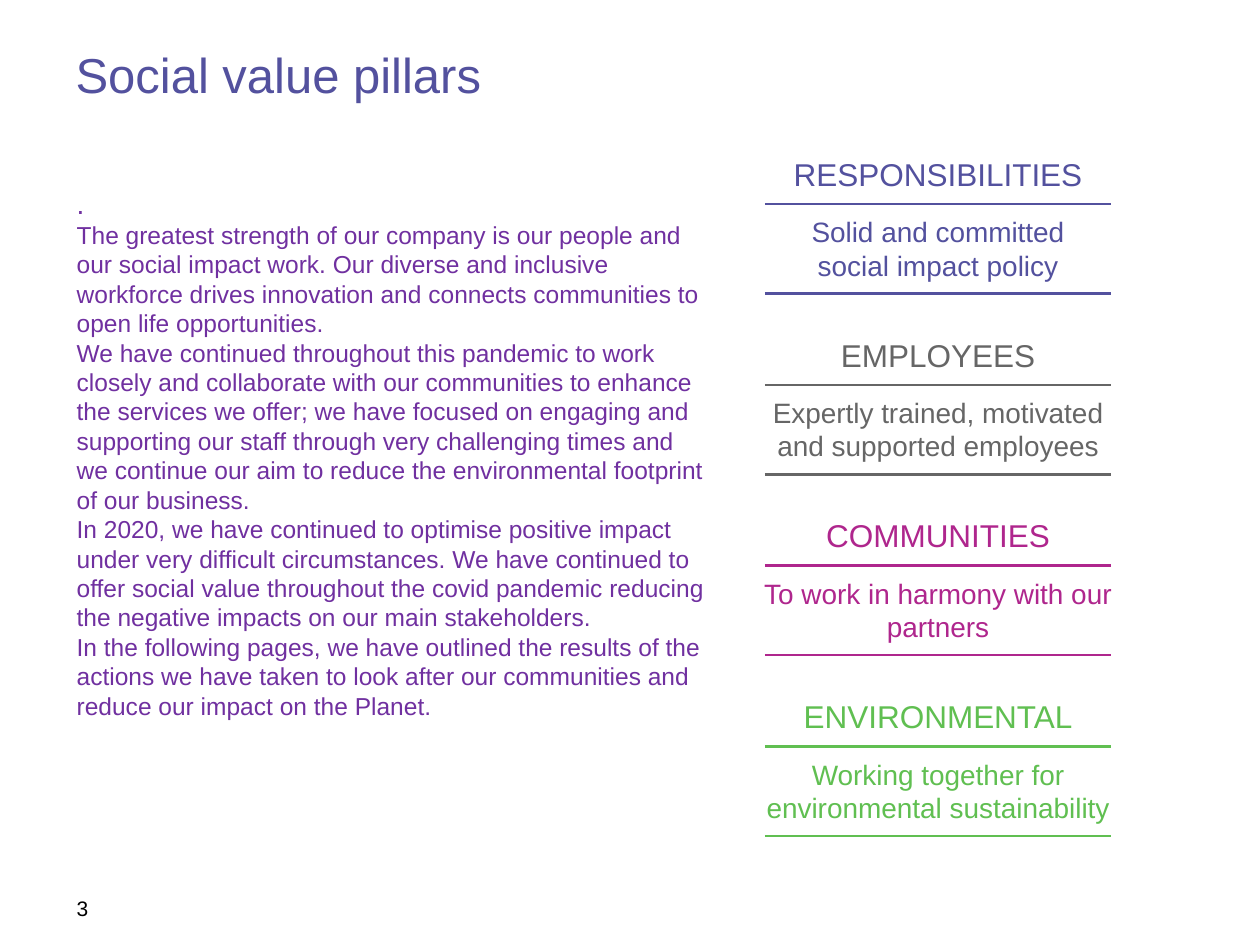
from dataclasses import dataclass

from lxml import etree
from pptx import Presentation
from pptx.dml.color import RGBColor
from pptx.enum.shapes import MSO_CONNECTOR
from pptx.enum.text import MSO_ANCHOR, MSO_AUTO_SIZE, PP_ALIGN
from pptx.oxml.ns import qn
from pptx.util import Inches, Pt

LEFT, CENTER = PP_ALIGN.LEFT, PP_ALIGN.CENTER
TOP, MIDDLE = MSO_ANCHOR.TOP, MSO_ANCHOR.MIDDLE
STRAIGHT = MSO_CONNECTOR.STRAIGHT
NO_FIT = MSO_AUTO_SIZE.NONE


@dataclass(frozen=True)
class Theme:
    """Fonts, type sizes in points and colours of the slide."""
    font: str = "Arial"
    title: int = 28
    head: int = 18
    lead: int = 16
    body: int = 14
    note: int = 12
    rule: float = 1.5
    indigo: str = "53519E"
    purple: str = "7030A0"
    grey: str = "666666"
    pink: str = "AF268D"
    green: str = "60BF51"
    black: str = "000000"


THEME = Theme()

STORY = [
    "The greatest strength of our company is our people and our social impact work. "
    "Our diverse and inclusive workforce drives innovation and connects communities "
    "to open life opportunities.",
    "We have continued throughout this pandemic to work closely and collaborate with "
    "our communities to enhance the services we offer; we have focused on engaging and "
    "supporting our staff through very challenging times and we continue our aim to "
    "reduce the environmental footprint of our business.",
    "In 2020, we have continued to optimise positive impact under very difficult "
    "circumstances. We have continued to offer social value throughout the covid "
    "pandemic reducing the negative impacts on our main stakeholders.",
    "In the following pages, we have outlined the results of the actions we have taken "
    "to look after our communities and reduce our impact on the Planet.",
]

PILLARS = [
    ("RESPONSIBILITIES", "Solid and committed social impact policy", THEME.indigo, 2.76),
    ("EMPLOYEES", "Expertly trained, motivated and supported employees", THEME.grey, 2.98),
    ("COMMUNITIES", "To work in harmony with our partners", THEME.pink, 2.98),
    ("ENVIRONMENTAL", "Working together for environmental sustainability", THEME.green, 2.98),
]
PILLAR_TOP, PILLAR_STEP = 1.18, 1.435
PILLAR_MID, RULE_WIDTH = 7.445, 2.75


def style(para, size, color, align=LEFT):
    """Set the font and alignment of a paragraph."""
    para.alignment = align
    para.font.name = THEME.font
    para.font.size = Pt(size)
    para.font.color.rgb = RGBColor.from_string(color)


def add_text(shapes, box, lines, color, align=LEFT, anchor=TOP):
    """Add a text box with one paragraph per (text, size) pair."""
    frame = shapes.add_textbox(*map(Inches, box)).text_frame
    frame.word_wrap = True
    frame.vertical_anchor = anchor
    frame.text = "\n".join(text for text, _ in lines)
    for para, (_, size) in zip(frame.paragraphs, lines):
        style(para, size, color, align)


def add_rule(shapes, top, color):
    """Add a horizontal rule centred on the pillar column."""
    left = PILLAR_MID - RULE_WIDTH / 2
    ends = left, top, left + RULE_WIDTH, top
    rule = shapes.add_connector(STRAIGHT, *map(Inches, ends))
    rule.line.color.rgb = RGBColor.from_string(color)
    rule.line.width = Pt(THEME.rule)
    etree.SubElement(rule._element.spPr, qn("a:effectLst"))


def add_pillar(slide, top, head, text, color, width):
    """Add a grouped heading with its text between two rules."""
    shapes = slide.shapes.add_group_shape().shapes
    add_text(shapes, (PILLAR_MID - 1.355, top, 2.71, 0.4),
             [(head, THEME.head)], color, CENTER)
    add_rule(shapes, top + 0.44, color)
    add_text(shapes, (PILLAR_MID - width / 2, top + 0.47, width, 0.64),
             [(text, THEME.lead)], color, CENTER, MIDDLE)
    add_rule(shapes, top + 1.15, color)


def set_title(slide, text):
    """Place and format the title."""
    title = slide.shapes.title
    title.left, title.top, title.width, title.height = map(Inches, (0.5, 0.3, 9, 0.85))
    frame = title.text_frame
    frame.text = text
    frame.auto_size = NO_FIT
    frame.vertical_anchor = TOP
    style(frame.paragraphs[0], THEME.title, THEME.indigo)


def main():
    """Build and save the slide."""
    deck = Presentation()
    deck.slide_width, deck.slide_height = Inches(10), Inches(7.5)
    slide = deck.slides.add_slide(deck.slide_layouts[5])
    set_title(slide, "Social value pillars")
    story = [(".", THEME.lead)] + [(text, THEME.body) for text in STORY]
    add_text(slide.shapes, (0.51, 1.43, 5.19, 5.12), story, THEME.purple)
    for row, pillar in enumerate(PILLARS):
        add_pillar(slide, PILLAR_TOP + row * PILLAR_STEP, *pillar)
    add_text(slide.shapes, (0.51, 7.06, 2.33, 0.4), [("3", THEME.note)], THEME.black)
    deck.save("out.pptx")


if __name__ == "__main__":
    main()
